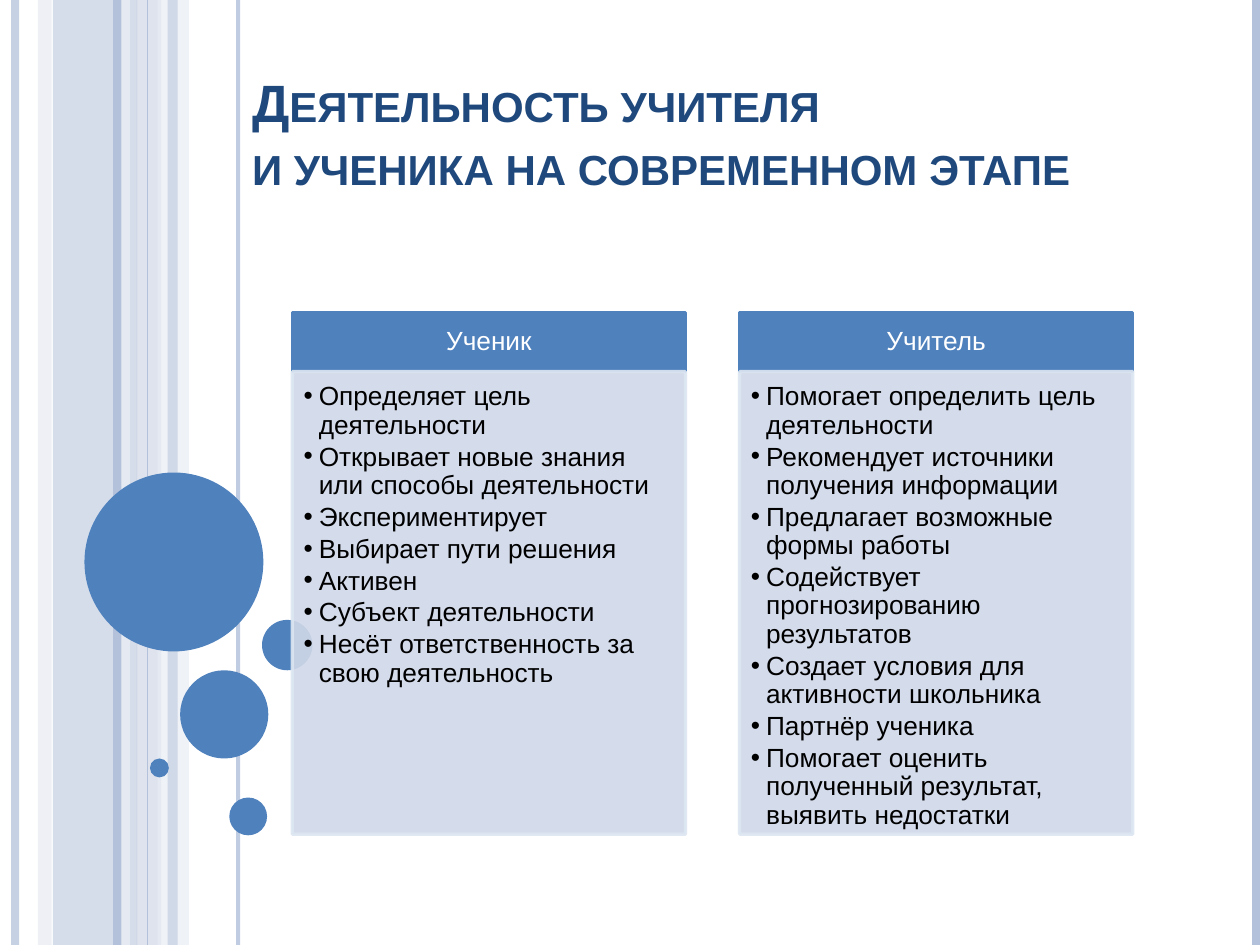
"""Build a slide comparing the roles of pupil and teacher."""
from lxml.etree import SubElement
from pptx import Presentation
from pptx.dml.color import RGBColor
from pptx.enum.shapes import MSO_CONNECTOR, MSO_SHAPE
from pptx.enum.text import MSO_ANCHOR, MSO_AUTO_SIZE, PP_ALIGN
from pptx.oxml.ns import qn
from pptx.util import Inches, Pt

COLORS = {
    "stripe": "B3C1DB",
    "pale": "D0D8E8",
    "faint": "E9EDF4",
    "accent": "4F81BD",
    "edge": "DCE6F2",
    "title": "1F497D",
    "white": "FFFFFF",
    "black": "000000",
}

BANDS = [
    (0.42, 0.67, "stripe", 54),
    (0.3, 0.11, "pale", 36),
    (1.08, 0.2, "pale", 70),
    (1.25, 0.25, "faint", 71),
]
RULES = [
    (0.12, "stripe", 4.5, 73),
    (1, "faint", 4.5, 83),
    (0.93, "stripe", 4.5, 100),
    (1.89, "stripe", 2.25, 82),
    (1.17, "stripe", 0.75, 100),
    (9.97, "stripe", 4.5, 100),
]
FRONT_BAND = (1.33, 0.08, "stripe", 51)
CIRCLES = [
    (0.67, 3.75, 1.42),
    (1.43, 5.32, 0.7),
    (1.19, 6.02, 0.15),
    (1.82, 6.33, 0.3),
    (2.08, 4.92, 0.4),
]
TITLE_LINES = ["Деятельность учителя", "и ученика на современном этапе"]
ROLES = [
    ("Ученик", [
        "Определяет цель деятельности",
        "Открывает новые знания или способы деятельности",
        "Экспериментирует",
        "Выбирает пути решения",
        "Активен",
        "Субъект деятельности",
        "Несёт ответственность за свою деятельность",
    ]),
    ("Учитель", [
        "Помогает определить цель деятельности",
        "Рекомендует источники получения информации",
        "Предлагает возможные формы работы",
        "Содействует прогнозированию результатов",
        "Создает условия для активности школьника",
        "Партнёр ученика",
        "Помогает оценить полученный результат, выявить недостатки",
    ]),
]
COLUMN_LEFT, COLUMN_STEP, COLUMN_WIDTH = 2.32, 3.55, 3.12
HEADING_TOP, HEADING_HEIGHT, LIST_HEIGHT = 2.48, 0.47, 3.67


class SlideBuilder:
    """Hold the style and the current slide."""

    def __init__(self, presentation, font="Arial", size=15):
        self.height = presentation.slide_height
        self.slide = presentation.slides.add_slide(presentation.slide_layouts[4])
        self.font = font
        self.size = size

    def paint(self, fill, color, opacity=100):
        fill.solid()
        fill.fore_color.rgb = RGBColor.from_string(COLORS[color])
        if opacity < 100:
            color_element = fill._xPr.find(qn("a:solidFill"))[0]
            SubElement(color_element, qn("a:alpha"), val=str(opacity * 1000))

    def shape(self, kind, left, top, width, height, color, opacity=100):
        shape = self.slide.shapes.add_shape(kind, left, top, width, height)
        shape.shadow.inherit = False
        self.paint(shape.fill, color, opacity)
        shape.line.fill.background()

    def band(self, left, width, color, opacity):
        self.shape(MSO_SHAPE.RECTANGLE, Inches(left), 0, Inches(width),
                   self.height, color, opacity)

    def circle(self, left, top, diameter):
        self.shape(MSO_SHAPE.OVAL, Inches(left), Inches(top),
                   Inches(diameter), Inches(diameter), "accent")

    def rule(self, x, color, width, opacity):
        connector = self.slide.shapes.add_connector(
            MSO_CONNECTOR.STRAIGHT, Inches(x), 0, Inches(x), self.height)
        connector.line.width = Pt(width)
        self.paint(connector.line.fill, color, opacity)
        SubElement(connector._element.spPr, qn("a:effectLst"))

    def placeholder(self, index, box, anchor, insets):
        shape = next(item for item in self.slide.placeholders
                     if item.placeholder_format.idx == index)
        self.slide.shapes._spTree.append(shape._element)
        shape.left, shape.top, shape.width, shape.height = map(Inches, box)
        frame = shape.text_frame
        frame.word_wrap = True
        frame.auto_size = MSO_AUTO_SIZE.NONE
        frame.vertical_anchor = anchor
        (frame.margin_left, frame.margin_top,
         frame.margin_right, frame.margin_bottom) = map(Inches, insets)
        return shape

    def run(self, paragraph, text, color, size=None, bold=False):
        run = paragraph.add_run()
        run.text = text
        run.font.name = self.font
        run.font.size = Pt(size or self.size)
        run.font.bold = bold
        run.font.color.rgb = RGBColor.from_string(COLORS[color])
        return run

    def title(self, lines, box):
        shape = self.placeholder(0, box, MSO_ANCHOR.BOTTOM, (0.1, 0.05, 0.1, 0.05))
        paragraph = shape.text_frame.paragraphs[0]
        paragraph.alignment = PP_ALIGN.LEFT
        for number, line in enumerate(lines):
            if number:
                paragraph.add_line_break()
            run = self.run(paragraph, line, "title", 30, True)
            run._r.get_or_add_rPr().set("cap", "small")

    def heading(self, index, text, box):
        shape = self.placeholder(index, box, MSO_ANCHOR.MIDDLE,
                                 (0.12, 0.07, 0.12, 0.07))
        self.paint(shape.fill, "accent")
        self.paint(shape.line.fill, "accent")
        shape.line.width = Pt(2)
        paragraph = shape.text_frame.paragraphs[0]
        paragraph.alignment = PP_ALIGN.CENTER
        paragraph.line_spacing = 0.9
        paragraph.space_before = Pt(0)
        self.run(paragraph, text, "white")

    def bullets(self, index, items, box):
        shape = self.placeholder(index, box, MSO_ANCHOR.TOP,
                                 (0.09, 0.09, 0.12, 0.13))
        self.paint(shape.fill, "pale", 90)
        self.paint(shape.line.fill, "edge", 90)
        shape.line.width = Pt(2)
        frame = shape.text_frame
        for number, item in enumerate(items):
            paragraph = frame.add_paragraph() if number else frame.paragraphs[0]
            paragraph.level = 1
            paragraph.line_spacing = 0.9
            paragraph.space_before = Pt(0)
            paragraph.space_after = Pt(2)
            properties = paragraph._p.get_or_add_pPr()
            properties.set("marL", str(Inches(0.12)))
            properties.set("indent", str(-Inches(0.12)))
            SubElement(properties, qn("a:buChar"), char="•")
            self.run(paragraph, item, "black")


def main():
    presentation = Presentation()
    presentation.slide_width = Inches(10)
    presentation.slide_height = Inches(7.5)
    builder = SlideBuilder(presentation)
    for band in BANDS:
        builder.band(*band)
    for rule in RULES:
        builder.rule(*rule)
    builder.band(*FRONT_BAND)
    for circle in CIRCLES:
        builder.circle(*circle)
    builder.title(TITLE_LINES, (1.9, 0, 8.1, 1.61))
    for column, (role, actions) in enumerate(ROLES):
        left = COLUMN_LEFT + column * COLUMN_STEP
        index = 1 + 2 * column
        builder.heading(index, role,
                        (left, HEADING_TOP, COLUMN_WIDTH, HEADING_HEIGHT))
        builder.bullets(index + 1, actions,
                        (left, HEADING_TOP + HEADING_HEIGHT, COLUMN_WIDTH, LIST_HEIGHT))
    presentation.save("out.pptx")


if __name__ == "__main__":
    main()
